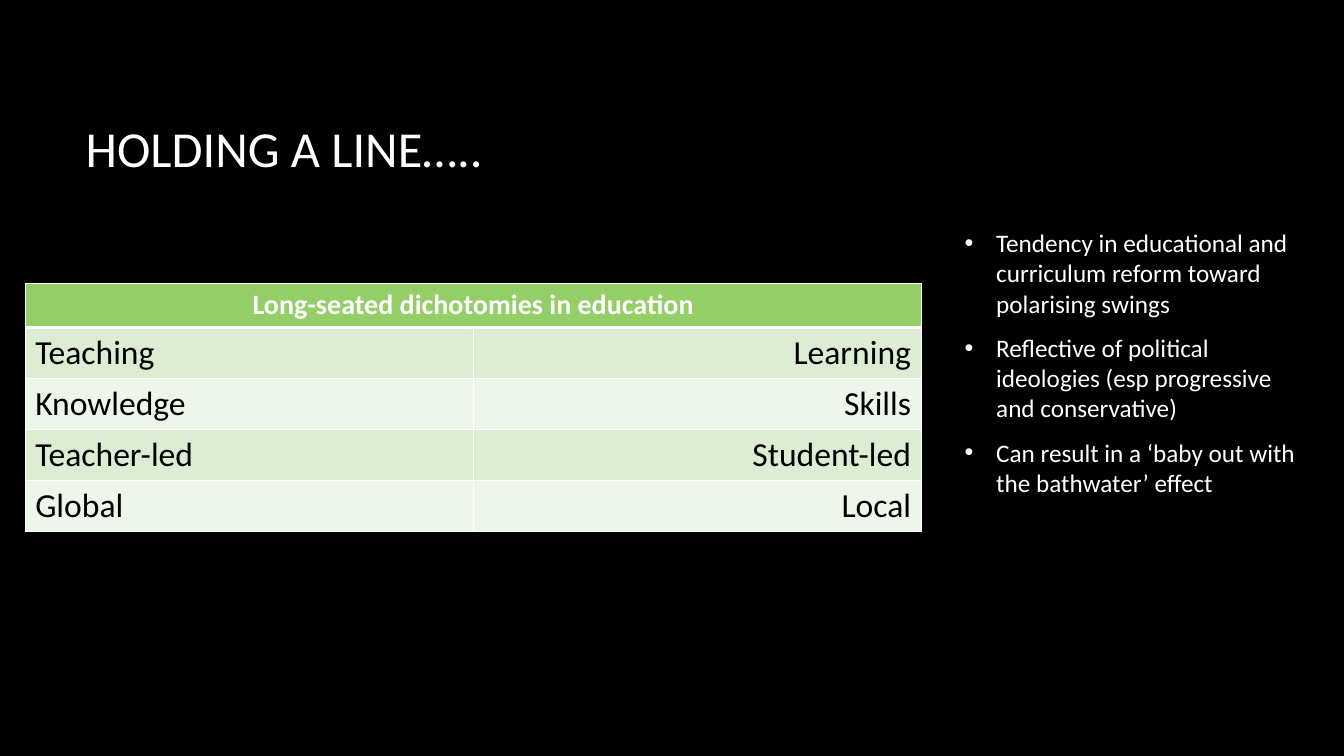
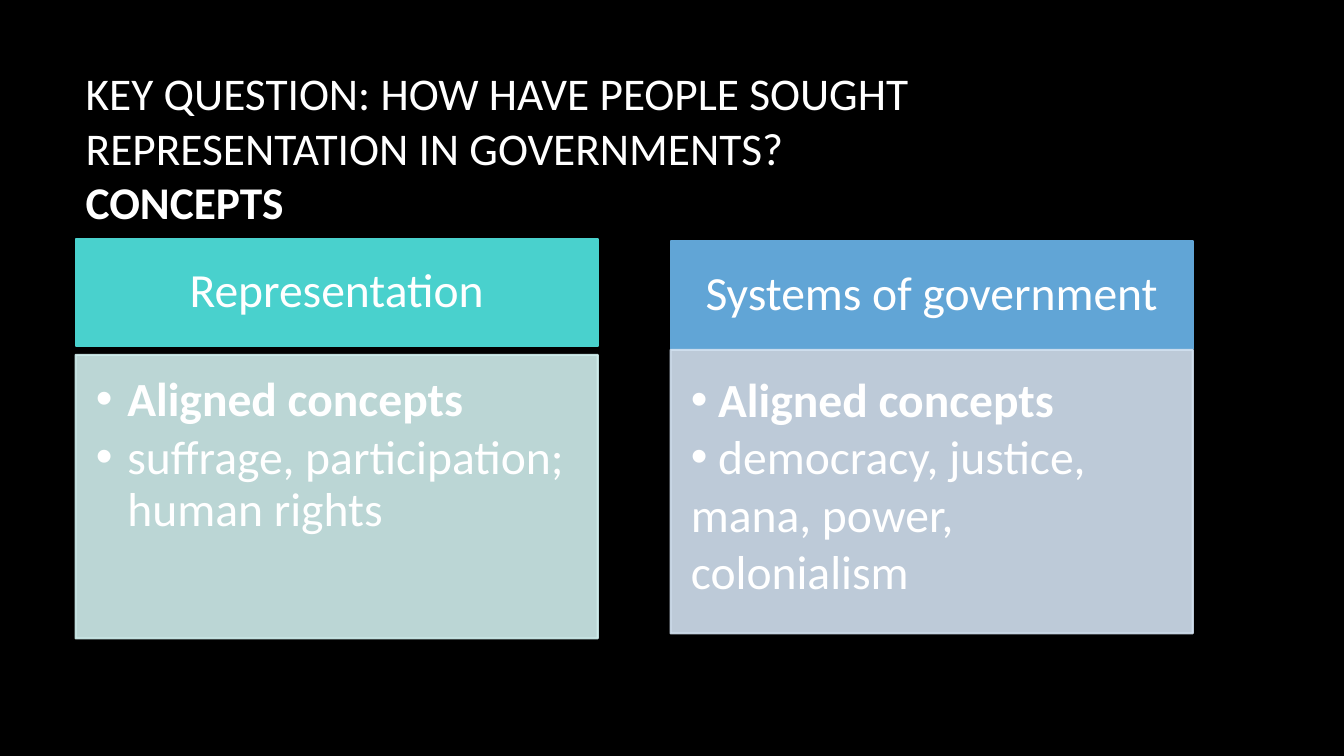
from pptx import Presentation
from pptx.dml.color import RGBColor
from pptx.enum.text import MSO_ANCHOR, MSO_AUTO_SIZE, PP_ALIGN
from pptx.enum.shapes import MSO_SHAPE
from pptx.oxml.ns import qn
from pptx.util import Pt
from lxml import etree

BLACK = RGBColor(0x00, 0x00, 0x00)
WHITE = RGBColor(0xFF, 0xFF, 0xFF)
GREEN = RGBColor(0x94, 0xCE, 0x67)
BANDS = [RGBColor(0xDC, 0xED, 0xD3), RGBColor(0xEE, 0xF6, 0xEB)]
TEAL = RGBColor(0x49, 0xD1, 0xCD)
MINT = RGBColor(0xD0, 0xEE, 0xED)
BLUE = RGBColor(0x61, 0xA5, 0xD6)
PALE = RGBColor(0xD2, 0xE1, 0xF0)
FONT = "Calibri"


def write(para, text, size=18, bold=False, color=WHITE, align=PP_ALIGN.LEFT,
          bullet=False, indent=0, after=0, line=1.0):
    para.alignment = align
    para.line_spacing = line
    para.space_before = Pt(0)
    para.space_after = Pt(after)
    if bullet:
        props = para._p.get_or_add_pPr()
        props.set("marL", str(Pt(indent)))
        props.set("indent", str(-Pt(indent)))
        etree.SubElement(props, qn("a:buFont"), typeface="Arial")
        etree.SubElement(props, qn("a:buChar"), char="•")
    run = para.add_run()
    run.text = text
    font = run.font
    font.name, font.size, font.bold = FONT, Pt(size), bold
    font.color.rgb = color


def edge(cell, side, width):
    line = etree.SubElement(cell._tc.get_or_add_tcPr(), qn("a:ln" + side), w=str(Pt(width)))
    fill = etree.SubElement(line, qn("a:solidFill"))
    etree.SubElement(fill, qn("a:srgbClr"), val=str(WHITE))


# Shared page and title style
prs = Presentation()
prs.slide_width, prs.slide_height = Pt(960), Pt(540)
back = prs.slide_master.background.fill
back.solid()
back.fore_color.rgb = BLACK

slides = []
for head, size in [("HOLDING A LINE…..", 36),
                   ("KEY QUESTION: HOW HAVE PEOPLE SOUGHT REPRESENTATION IN GOVERNMENTS?", 32.4)]:
    slide = prs.slides.add_slide(prs.slide_layouts[5])
    title = slide.shapes.title
    title.left, title.top, title.width, title.height = Pt(54), Pt(48), Pt(798), Pt(114.5)
    frame = title.text_frame
    frame.word_wrap = True
    frame.auto_size = MSO_AUTO_SIZE.NONE
    frame.vertical_anchor = MSO_ANCHOR.MIDDLE
    write(frame.paragraphs[0], head, size=size)
    slides.append(slide)
first, second = slides

# Slide 1: points on the right
frame = first.shapes.add_textbox(Pt(682), Pt(159), Pt(253.5), Pt(205)).text_frame
frame.word_wrap = True
points = ["Tendency in educational and curriculum reform toward polarising swings",
          "Reflective of political ideologies (esp progressive and conservative)",
          "Can result in a ‘baby out with the bathwater’ effect"]
for i, point in enumerate(points):
    para = frame.add_paragraph() if i else frame.paragraphs[0]
    write(para, point, bullet=True, indent=22.5, after=10)

# Slide 1: table of opposites
rows = [("Long-seated dichotomies in education", ""), ("Teaching", "Learning"),
        ("Knowledge", "Skills"), ("Teacher-led", "Student-led"), ("Global", "Local")]
table = first.shapes.add_table(len(rows), 2, Pt(18), Pt(202.3), Pt(640), Pt(177.6)).table
table.cell(0, 0).merge(table.cell(0, 1))
for r, row in enumerate(rows):
    table.rows[r].height = Pt(36.5 if r else 31.6)
    for c, text in enumerate(row):
        cell = table.cell(r, c)
        for side in "LRTB":
            edge(cell, side, 3 if (r, side) in [(0, "B"), (1, "T")] else 1)
        cell.fill.solid()
        cell.fill.fore_color.rgb = BANDS[(r - 1) % 2] if r else GREEN
        para = cell.text_frame.paragraphs[0]
        if r:
            write(para, text, size=24, color=BLACK,
                  align=PP_ALIGN.RIGHT if c else PP_ALIGN.LEFT)
        elif text:
            write(para, text, size=20, bold=True, align=PP_ALIGN.CENTER)

# Slide 2: second line of the title
para = second.shapes.title.text_frame.paragraphs[0]
para.add_line_break()
write(para, "CONCEPTS", size=32.4, bold=True)

# Slide 2: concept cards, each a header over a list
lead = dict(indent=22.5, after=5, line=0.9)
cards = [
    (54, 170.5, 253.5, TEAL, MINT, "Representation",
     ["Aligned concepts", "suffrage, participation; human rights"], lead),
    (479, 172.5, 250, BLUE, PALE, "Systems of government",
     [" Aligned concepts", " democracy, justice, mana, power, colonialism"], {}),
]
for left, top, low, dark, light, name, items, style in cards:
    for y, high, tint, pads in [(top, 77, dark, (18.5, 11, 18.5, 11)),
                                (low, 202.5, light, (14.5, 14.5, 18.5, 21.5))]:
        box = second.shapes.add_shape(MSO_SHAPE.RECTANGLE, Pt(left), Pt(y), Pt(373), Pt(high))
        box.shadow.inherit = False
        box.fill.solid()
        box.fill.fore_color.rgb = tint
        box.line.color.rgb = tint
        box.line.width = Pt(1.5)
        frame = box.text_frame
        frame.word_wrap = True
        (frame.margin_left, frame.margin_top,
         frame.margin_right, frame.margin_bottom) = map(Pt, pads)
        if tint == dark:
            frame.vertical_anchor = MSO_ANCHOR.MIDDLE
            write(frame.paragraphs[0], name, size=34, align=PP_ALIGN.CENTER, line=0.9)
            continue
        frame.vertical_anchor = MSO_ANCHOR.TOP
        for color in box._element.spPr.iter(qn("a:srgbClr")):
            etree.SubElement(color, qn("a:alpha"), val="90000")
        for i, item in enumerate(items):
            para = frame.add_paragraph() if i else frame.paragraphs[0]
            write(para, item, size=34, bold=i == 0, bullet=True, **style)

prs.save("out.pptx")
